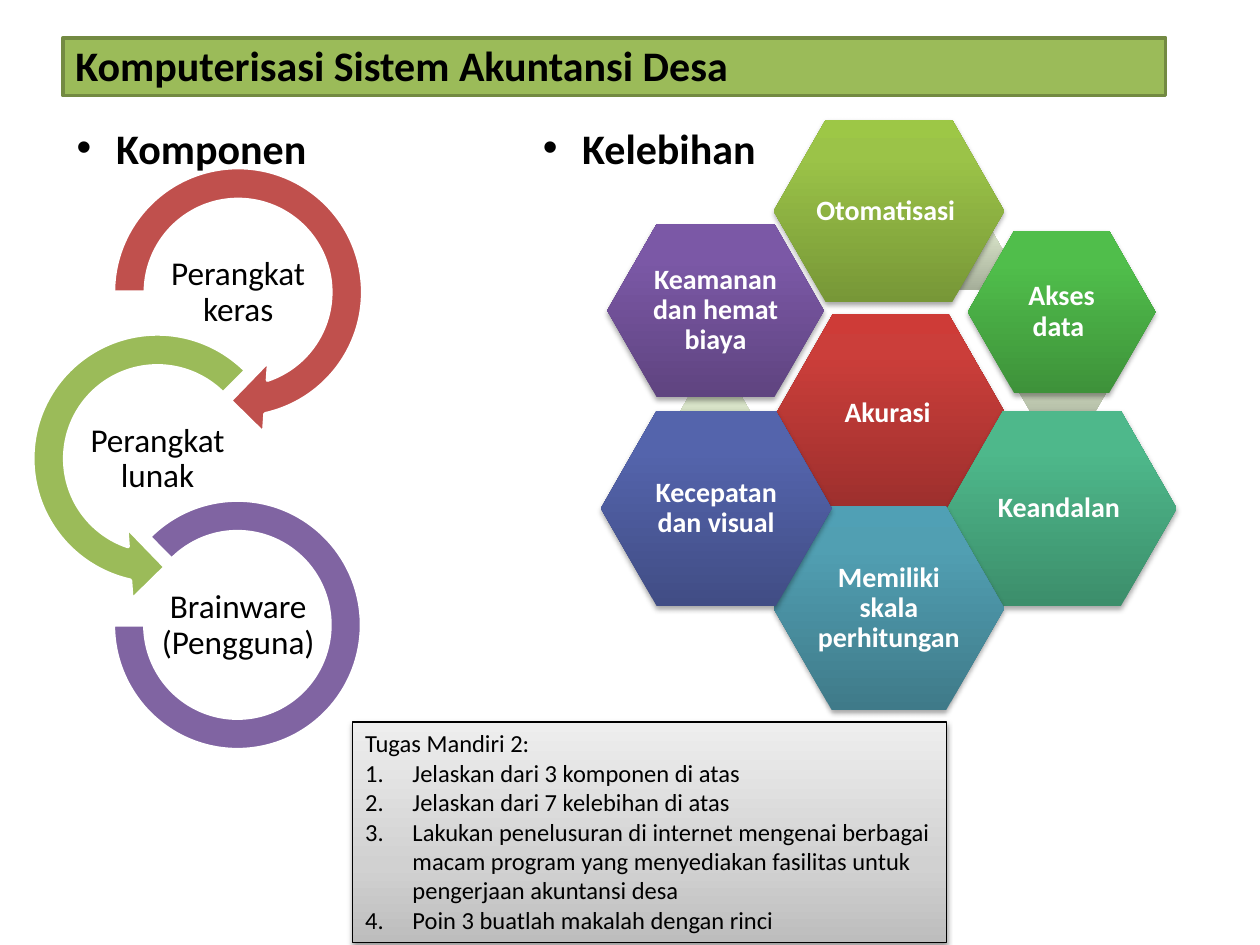
from lxml.etree import SubElement
from pptx import Presentation
from pptx.dml.color import RGBColor
from pptx.enum.shapes import MSO_SHAPE as Shape
from pptx.enum.text import MSO_ANCHOR as Anchor, PP_ALIGN as Align
from pptx.oxml.ns import qn
from pptx.util import Pt

COLORS = {
    "text": "000000", "light": "FFFFFF",
    "banner": "9BBB59", "banner_edge": "738A42",
    "hardware": "C0504D", "software": "9BBB59", "brainware": "8064A2",
}
# Gradients run from bottom to top: (position in percent, colour)
TASK_STOPS = [(0, "BDBDBD"), (35, "D1D1D1"), (100, "EEEEEE")]
ACCENT_COLORS = ("A6AF9A", "D8E3C8", "D9E4C8")

COMPONENTS = [
    ("Perangkat keras", Shape.CIRCULAR_ARROW, "hardware",
     (53.3, 84.2, 165.6, 165.6), (0.11, 11.42, 45, 108, 0.125), 90),
    ("Perangkat lunak", Shape.LEFT_CIRCULAR_ARROW, "software",
     (7.2, 179.3, 165.6, 165.6), (0.11, 11.42, 63, 189, 0.125), 43.9),
    ("Brainware (Pengguna)", Shape.BLOCK_ARC, "brainware",
     (64.8, 285.8, 141.8, 142.6), (135, 108, 0.127), 90),
]
LABEL_TOP, LABEL_STEP = 144, 95.4

ACCENTS = [(524.2, 123.1), (582.5, 203), (383.8, 222.5)]
ADVANTAGES = [
    ("Akurasi ", (443.5, 179.3, 131, 113.8), ("9C2F2D", "CB3E3A", "CE3B37")),
    ("Otomatisasi ", (442.1, 68.4, 131.8, 104.4), ("779737", "9BC348", "9DC746")),
    ("Akses data ", (553, 131.8, 107.3, 92.9), ("3E923A", "50BE4B", "4FC149")),
    ("Keandalan ", (541.4, 234.7, 131, 111.6), ("3C8E6B", "4EB88B", "4CBB8C")),
    ("Memiliki skala perhitungan ", (442.1, 289.4, 131.8, 116.6),
     ("3F7A89", "519FB2", "50A0B5")),
    ("Kecepatan dan visual", (343.4, 234.7, 131.8, 111.6),
     ("414D85", "5464AC", "5363AF")),
    ("Keamanan dan hemat biaya", (347, 128.2, 123.8, 98.6),
     ("5F4480", "7B58A6", "7C57A8")),
]
TASKS = [
    "Jelaskan dari 3 komponen di atas",
    "Jelaskan dari 7 kelebihan di atas",
    "Lakukan penelusuran di internet mengenai berbagai macam program yang "
    "menyediakan fasilitas untuk pengerjaan akuntansi desa",
    "Poin 3 buatlah makalah dengan rinci",
]


class SlideBuilder:
    font = "Calibri"

    def __init__(self, slide):
        self.slide = slide

    def shape(self, preset, box, fill=None, edge=None, edge_width=2, adjust=()):
        shape = self.slide.shapes.add_shape(preset, *map(Pt, box))
        shape.shadow.inherit = False
        for index, value in enumerate(adjust):
            shape.adjustments[index] = value
        if fill:
            shape.fill.solid()
            shape.fill.fore_color.rgb = RGBColor.from_string(COLORS[fill])
        if edge:
            shape.line.color.rgb = RGBColor.from_string(COLORS[edge])
            shape.line.width = Pt(edge_width)
        else:
            shape.line.fill.background()
        return shape

    def textbox(self, box):
        return self.slide.shapes.add_textbox(*map(Pt, box))

    def gradient(self, shape, stops):
        shape.fill.gradient()
        shape.fill.gradient_angle = 90
        stop_list = next(shape._element.spPr.iter(qn("a:gsLst")))
        stop_list.clear()
        for position, color in stops:
            stop = SubElement(stop_list, qn("a:gs"), pos=str(position * 1000))
            SubElement(stop, qn("a:srgbClr"), val=color)

    def drop_shadow(self, shape, opacity, distance):
        effects = shape._element.spPr.find(qn("a:effectLst"))
        shadow = SubElement(effects, qn("a:outerShdw"), blurRad=str(Pt(3.1)),
                            dist=str(Pt(distance)), dir="5400000", rotWithShape="0")
        color = SubElement(shadow, qn("a:srgbClr"), val="000000")
        SubElement(color, qn("a:alpha"), val=str(opacity * 1000))

    def put_text(self, shape, lines, size, color="text", bold=False,
                 align=Align.LEFT, anchor=Anchor.TOP, inset=None, spacing=None):
        """Fill the shape with one paragraph a line and return the paragraphs."""
        frame = shape.text_frame
        frame.word_wrap = True
        frame.vertical_anchor = anchor
        if inset is not None:
            frame.margin_left = frame.margin_right = Pt(inset)
            frame.margin_top = frame.margin_bottom = Pt(inset)
        frame.text = "\n".join(lines)
        for paragraph in frame.paragraphs:
            paragraph.alignment = align
            if spacing:
                paragraph.line_spacing = spacing
            for run in paragraph.runs:
                run.font.name = self.font
                run.font.size = Pt(size)
                run.font.bold = bold
                run.font.color.rgb = RGBColor.from_string(COLORS[color])
        return frame.paragraphs

    def bullet(self, paragraph, indent, tag, **marker):
        properties = paragraph._p.get_or_add_pPr()
        properties.set("marL", str(Pt(indent)))
        properties.set("indent", str(-Pt(indent)))
        if tag == "a:buChar":
            SubElement(properties, qn("a:buFont"), typeface="Arial")
        SubElement(properties, qn(tag), **marker)

    def banner(self, title):
        banner = self.shape(Shape.RECTANGLE, (36, 21.6, 630, 33.1),
                            "banner", "banner_edge")
        self.put_text(banner, [title], 24, bold=True, anchor=Anchor.BOTTOM)

    def heading(self, text, left):
        box = self.textbox((left, 66.2, 236.9, 56.9))
        paragraph = self.put_text(box, [text], 24, bold=True)[0]
        paragraph.space_before = Pt(4.8)
        self.bullet(paragraph, 22.5, "a:buChar", char="•")

    def component(self, row, name, preset, color, box, adjust, label_left):
        self.shape(preset, box, color, "light", adjust=adjust)
        label = self.textbox((label_left, LABEL_TOP + row * LABEL_STEP, 92.2, 46.1))
        self.put_text(label, [name], 19, align=Align.CENTER, anchor=Anchor.MIDDLE,
                      inset=0.9, spacing=0.9)

    def hexagon(self, box, colors):
        hexagon = self.shape(Shape.HEXAGON, box, adjust=(0.286, 1.155))
        self.gradient(hexagon, zip((0, 80, 100), colors))
        return hexagon

    def advantage(self, name, box, colors):
        hexagon = self.hexagon(box, colors)
        self.drop_shadow(hexagon, 35, 1.8)
        self.put_text(hexagon, [name], 16, "light", True, Align.CENTER,
                      Anchor.MIDDLE, inset=1.6, spacing=0.9)

    def task_panel(self, title, tasks):
        panel = self.shape(Shape.RECTANGLE, (201.6, 412.6, 339.1, 126),
                           edge="text", edge_width=0.75)
        self.gradient(panel, TASK_STOPS)
        self.drop_shadow(panel, 38, 1.6)
        for paragraph in self.put_text(panel, [title, *tasks], 14)[1:]:
            self.bullet(paragraph, 27, "a:buAutoNum", type="arabicPeriod")


def main():
    deck = Presentation()
    deck.slide_width, deck.slide_height = Pt(720), Pt(540)
    builder = SlideBuilder(deck.slides.add_slide(deck.slide_layouts[6]))

    builder.banner("Komputerisasi Sistem Akuntansi Desa")
    for row, component in enumerate(COMPONENTS):
        builder.component(row, *component)
    builder.heading("Komponen", 36.7)
    builder.heading("Kelebihan", 303.1)
    for left, top in ACCENTS:
        builder.hexagon((left, top, 49.7, 42.5), ACCENT_COLORS)
    for advantage in ADVANTAGES:
        builder.advantage(*advantage)
    builder.task_panel("Tugas Mandiri 2:", TASKS)
    deck.save("out.pptx")


if __name__ == "__main__":
    main()
